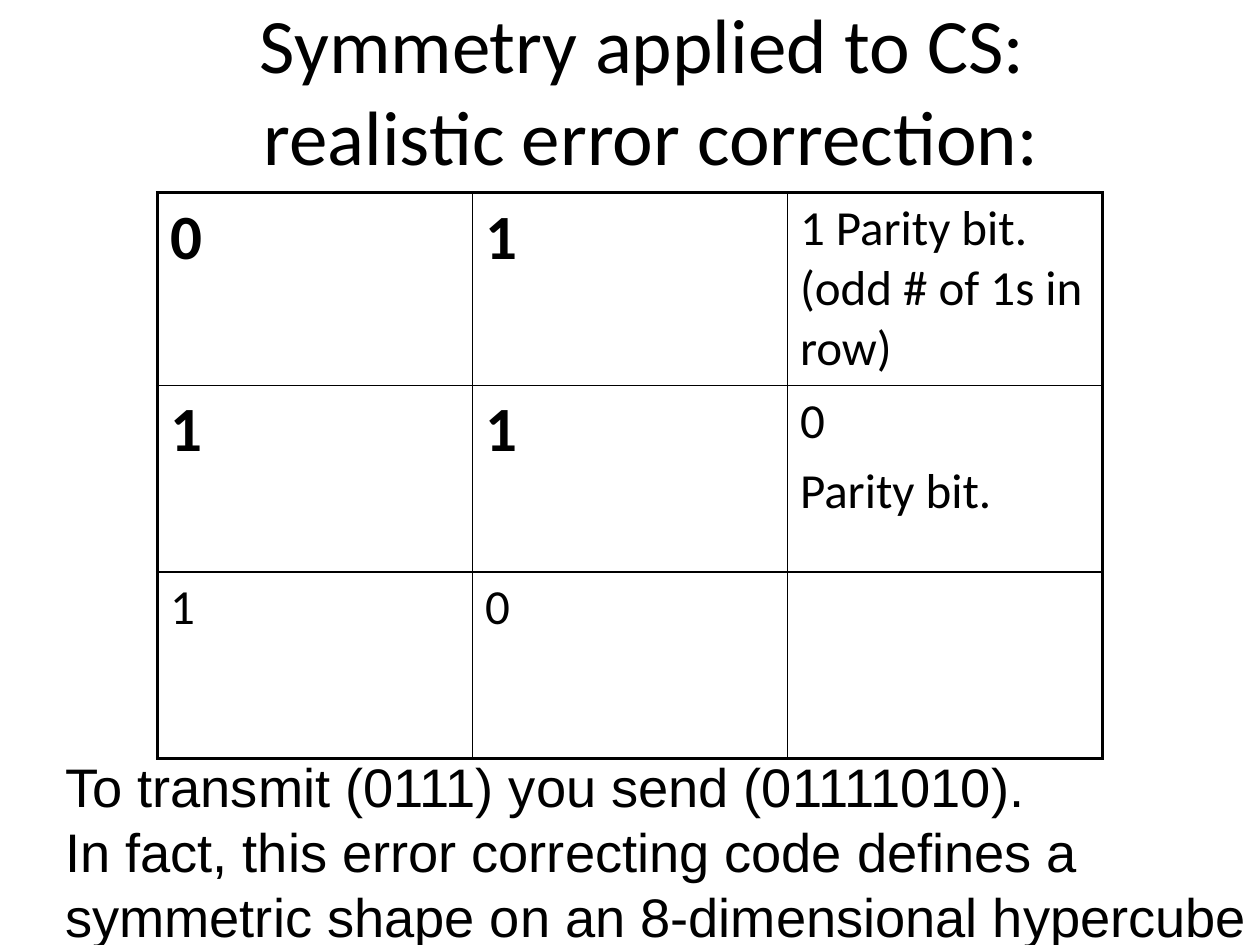
"""Build a slide on error correction with a parity table."""
from lxml.etree import SubElement
from pptx import Presentation
from pptx.dml.color import RGBColor
from pptx.enum.text import MSO_ANCHOR, PP_ALIGN
from pptx.oxml.ns import qn
from pptx.util import Inches, Pt

BLACK = "000000"


def write(frame, *texts, size, font="Calibri", color=BLACK, bold=False,
          align=PP_ALIGN.LEFT, before=0):
    for index, text in enumerate(texts):
        paragraph = frame.paragraphs[0] if index == 0 else frame.add_paragraph()
        paragraph.text = text
        paragraph.alignment = align
        paragraph.space_before = Pt(before)
        for run in paragraph.runs:
            run.font.size = Pt(size)
            run.font.name = font
            run.font.bold = bold
            run.font.color.rgb = RGBColor.from_string(color)


def set_borders(cell, widths, color=BLACK):
    properties = cell._tc.get_or_add_tcPr()
    for index, (side, width) in enumerate(widths.items()):
        line = SubElement(properties, qn(f"a:ln{side}"), w=str(Pt(width)))
        fill = SubElement(line, qn("a:solidFill"))
        SubElement(fill, qn("a:srgbClr"), val=color)
        properties.insert(index, line)


presentation = Presentation()
presentation.slide_width = Inches(10)
presentation.slide_height = Inches(7.5)
slide = presentation.slides.add_slide(presentation.slide_layouts[6])

title = slide.shapes.add_textbox(Inches(0.92), Inches(0.08), Inches(8.5), Inches(1.25))
title.text_frame.word_wrap = True
title.text_frame.vertical_anchor = MSO_ANCHOR.MIDDLE
write(title.text_frame, "Symmetry applied to CS: \vrealistic error correction:",
      size=44, align=PP_ALIGN.CENTER)

rows = [
    [["0"], ["1"], ["1 Parity bit.\v(odd # of 1s in\vrow)"]],
    [["1"], ["1"], ["0", "Parity bit."]],
    [["1"], ["0"], []],
]
last = len(rows) - 1
table = slide.shapes.add_table(3, 3, Inches(1.25), Inches(1.53),
                               Inches(7.5), Inches(4.49)).table
table.first_row = False
table.horz_banding = False
for row, height in zip(table.rows, (1.53, 1.48, 1.48)):
    row.height = Inches(height)

for row_index, row in enumerate(rows):
    for column_index, texts in enumerate(row):
        cell = table.cell(row_index, column_index)
        cell.fill.background()
        is_data = row_index < last and column_index < last
        size = 36 if is_data else 28
        write(cell.text_frame, *texts, size=size, bold=is_data, before=size * 0.2)
        outer = {"L": column_index == 0, "R": column_index == last,
                 "T": row_index == 0, "B": row_index == last}
        set_borders(cell, {side: 2.25 if edge else 1 for side, edge in outer.items()})

explanation = slide.shapes.add_textbox(Inches(0.42), Inches(5.93), Inches(9.58), Inches(1.65))
explanation.text_frame.word_wrap = False
write(explanation.text_frame, "To transmit (0111) you send (01111010).",
      "In fact, this error correcting code defines a\v"
      "symmetric shape on an 8-dimensional hypercube",
      size=31, font="Arial")

presentation.save("out.pptx")
